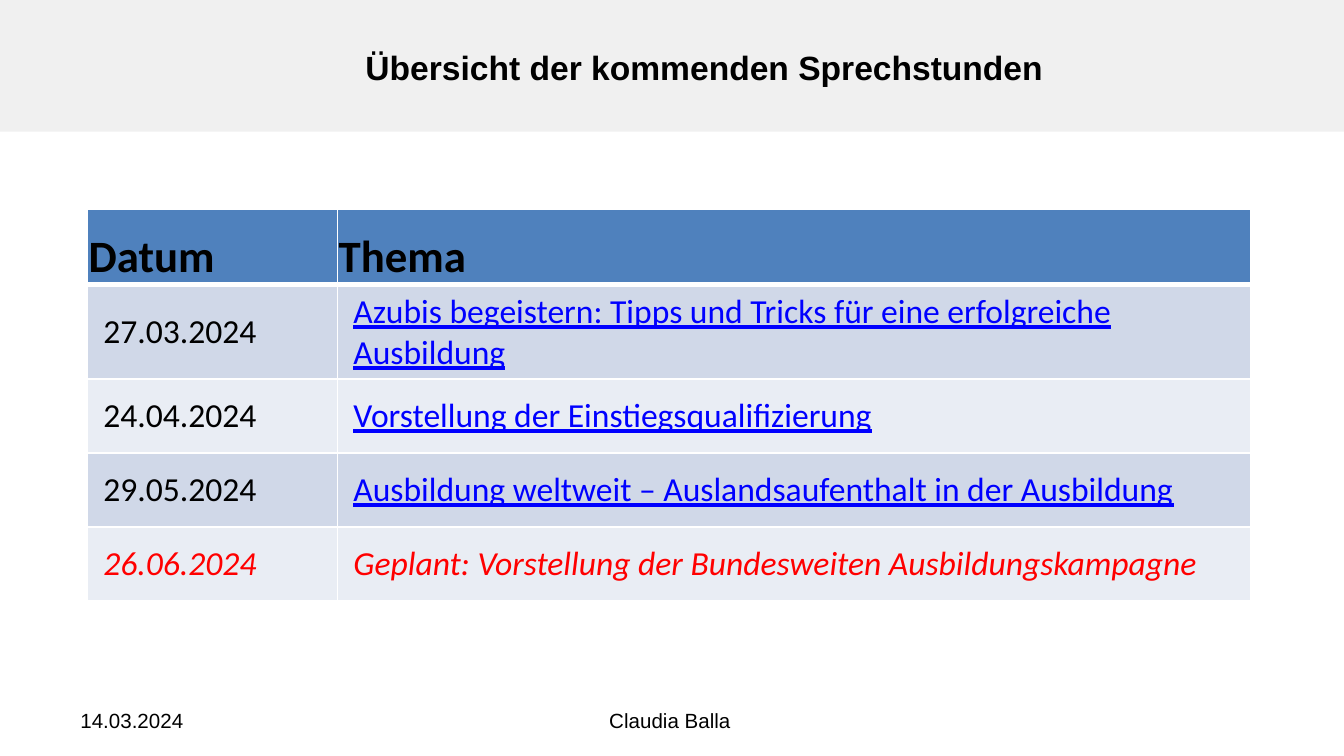
from lxml import etree
from pptx import Presentation
from pptx import util as u
from pptx.dml.color import RGBColor
from pptx.enum import shapes, text
from pptx.oxml import ns

COLORS = {
    "banner": "F0F0F0",
    "header": "4F81BD",
    "band_dark": "D0D8E8",
    "band_light": "E9EDF4",
    "border": "FFFFFF",
    "text": "000000",
    "link": "0000FF",
    "planned": "FF0000",
}

HEADINGS = ("Datum", "Thema")
SESSIONS = [
    ("27.03.2024", "Azubis begeistern: Tipps und Tricks für eine erfolgreiche Ausbildung"),
    ("24.04.2024", "Vorstellung der Einstiegsqualifizierung"),
    ("29.05.2024", "Ausbildung weltweit – Auslandsaufenthalt in der Ausbildung"),
    ("26.06.2024", "Geplant: Vorstellung der Bundesweiten Ausbildungskampagne"),
]
COLUMN_WIDTHS = (1.86, 6.8)
ROW_HEIGHTS = (0.56, 0.55, 0.55, 0.55, 0.55)


def color(name):
    return RGBColor.from_string(COLORS[name])


def write_text(frame, content, size=18, font="Calibri", fill="text", bold=False,
               italic=False, underline=False, align=text.PP_ALIGN.LEFT):
    paragraph = frame.paragraphs[0]
    paragraph.alignment = align
    run = paragraph.add_run()
    run.text = content
    run.font.name = font
    run.font.size = u.Pt(size)
    run.font.bold = bold
    run.font.italic = italic
    run.font.underline = underline
    run.font.color.rgb = color(fill)


def set_margins(target, left, top, right, bottom):
    target.margin_left = u.Inches(left)
    target.margin_top = u.Inches(top)
    target.margin_right = u.Inches(right)
    target.margin_bottom = u.Inches(bottom)


def add_text_box(slide, left, top, width, height, content, inset=0.1, **style):
    box = slide.shapes.add_textbox(*map(u.Inches, (left, top, width, height)))
    frame = box.text_frame
    frame.word_wrap = True
    frame.vertical_anchor = text.MSO_ANCHOR.MIDDLE
    set_margins(frame, inset, 0.05, 0.1, 0.05)
    write_text(frame, content, font="Arial", **style)


def add_banner(slide):
    banner = slide.shapes.add_shape(
        shapes.MSO_SHAPE.RECTANGLE, 0, 0, u.Inches(10), u.Inches(0.98))
    banner.shadow.inherit = False
    banner.fill.solid()
    banner.fill.fore_color.rgb = color("banner")
    banner.line.fill.background()


def set_borders(cell, top, bottom):
    """Draw solid cell borders; widths are in points."""
    properties = cell._tc.get_or_add_tcPr()
    widths = {"lnL": 1, "lnR": 1, "lnT": top, "lnB": bottom}
    for position, (tag, width) in enumerate(widths.items()):
        line = etree.Element(ns.qn(f"a:{tag}"), w=str(u.Pt(width)))
        fill = etree.SubElement(line, ns.qn("a:solidFill"))
        etree.SubElement(fill, ns.qn("a:srgbClr"), val=COLORS["border"])
        properties.insert(position, line)


def fill_cell(cell, content, background, anchor=text.MSO_ANCHOR.MIDDLE,
              margins=(0.12, 0.05, 0.12, 0.05), top=1, bottom=1, **style):
    cell.fill.solid()
    cell.fill.fore_color.rgb = color(background)
    cell.vertical_anchor = anchor
    set_margins(cell, *margins)
    set_borders(cell, top, bottom)
    write_text(cell.text_frame, content, **style)


def add_schedule(slide):
    table = slide.shapes.add_table(
        len(ROW_HEIGHTS), len(COLUMN_WIDTHS), u.Inches(0.65), u.Inches(1.56),
        u.Inches(sum(COLUMN_WIDTHS)), u.Inches(sum(ROW_HEIGHTS))).table
    for column, width in zip(table.columns, COLUMN_WIDTHS):
        column.width = u.Inches(width)
    for row, height in zip(table.rows, ROW_HEIGHTS):
        row.height = u.Inches(height)

    # Header row
    for column, heading in enumerate(HEADINGS):
        fill_cell(table.cell(0, column), heading, "header",
                  anchor=text.MSO_ANCHOR.BOTTOM, margins=(0.01, 0.01, 0.01, 0),
                  bottom=3, size=24, bold=True)

    # Sessions: confirmed topics look like links, the last one is only planned
    for row, (date, topic) in enumerate(SESSIONS, start=1):
        band = "band_dark" if row % 2 else "band_light"
        top = 3 if row == 1 else 1
        if row == len(SESSIONS):
            date_style = topic_style = {"fill": "planned", "italic": True}
        else:
            date_style = {}
            topic_style = {"fill": "link", "underline": True}
        fill_cell(table.cell(row, 0), date, band, top=top, **date_style)
        fill_cell(table.cell(row, 1), topic, band, top=top, **topic_style)


def main():
    presentation = Presentation()
    presentation.slide_width = u.Inches(10)
    presentation.slide_height = u.Inches(10 * 9 / 16)
    slide = presentation.slides.add_slide(presentation.slide_layouts[6])

    # Banner and title
    add_banner(slide)
    add_text_box(slide, 2.56, 0.18, 6.94, 0.64, "Übersicht der kommenden Sprechstunden",
                 inset=0.16, bold=True)

    # Schedule
    add_schedule(slide)

    # Footer
    add_text_box(slide, 0.5, 5.21, 2.33, 0.3, "14.03.2024", size=11)
    add_text_box(slide, 3.4, 5.21, 3.17, 0.3, "Claudia Balla", size=11,
                 align=text.PP_ALIGN.CENTER)

    presentation.save("out.pptx")


if __name__ == "__main__":
    main()
